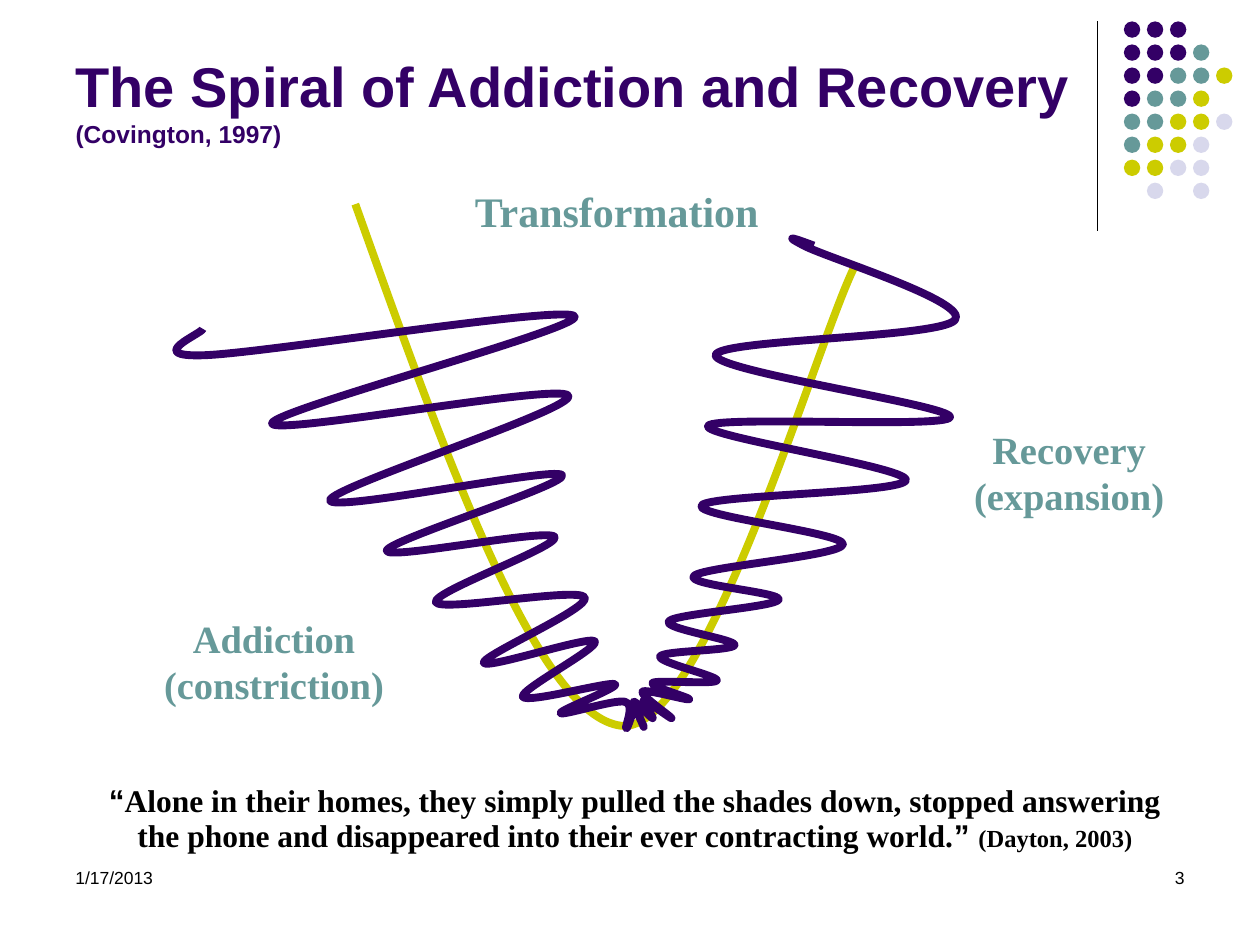
from dataclasses import dataclass

from lxml import etree
from pptx import Presentation
from pptx import util as u
from pptx.dml import color
from pptx.enum import shapes, text
from pptx.oxml import ns

PURPLE, TEAL, OLIVE, LILAC, BLACK = "330066", "669999", "CCCC00", "D8D8EC", "000000"
SANS, SERIF = "Arial", "Times New Roman"
LEFT, CENTER, RIGHT = text.PP_ALIGN.LEFT, text.PP_ALIGN.CENTER, text.PP_ALIGN.RIGHT

# Dot ornament: one letter per dot, evenly spaced
DOT_COLORS = {"P": PURPLE, "T": TEAL, "O": OLIVE, "L": LILAC}
DOT_ROWS = ["PPP", "PPPT", "PPTTO", "PTTO", "TTOOL", "TOOL", "OOLL", ".L.L"]
DOT_LEFT, DOT_TOP, DOT_SIZE = 8.92, 0.17, 0.13
DOT_PITCH = 1.28 / 7

Point = tuple[float, float]


@dataclass
class Label:
    lines: list[str]
    left: float
    top: float
    width: float
    height: float
    size: float
    font: str = SERIF
    color: str = TEAL
    bold: bool = True
    alignment: text.PP_ALIGN = CENTER
    wrap: bool = False


# Turning points of the curves, in inches
AXIS: list[Point] = [(2.82, 1.62), (4.93, 5.76), (6.79, 2.1)]
RECOVERY: list[Point] = [
    (6.46, 1.95), (6.38, 1.95), (7.58, 2.54), (5.68, 2.82), (7.54, 3.31), (5.62, 3.38),
    (7.19, 3.81), (5.57, 4.01), (6.69, 4.32), (5.51, 4.57), (6.18, 4.76), (5.31, 4.93),
    (5.83, 5.12), (5.24, 5.21), (5.69, 5.4), (5.18, 5.42), (5.47, 5.55), (5.1, 5.49),
    (5.33, 5.7), (5.11, 5.56), (5.18, 5.7), (5.03, 5.57), (5.11, 5.77), (5.04, 5.64),
]
ADDICTION: list[Point] = [
    (4.97, 5.78), (4.96, 5.57), (4.45, 5.66), (4.88, 5.43), (4.15, 5.53), (4.72, 5.09),
    (3.84, 5.26), (4.64, 4.74), (3.46, 4.78), (4.4, 4.26), (3.07, 4.37), (4.46, 3.77),
    (2.62, 3.97), (4.51, 3.14), (2.16, 3.36), (4.56, 2.51), (1.62, 2.82), (1.61, 2.61),
]

LABELS = [
    Label(["Transformation"], 3.67, 1.42, 2.48, 0.5, 24, alignment=LEFT),
    Label(["Addiction", "(constriction)"], 1.2, 4.83, 1.95, 0.83, 22),
    Label(["Recovery", "(expansion)"], 7.63, 3.33, 1.71, 0.83, 22),
    Label(["1/17/2013"], 0.5, 6.83, 2.33, 0.5, 10, SANS, BLACK, False, LEFT, True),
    Label(["3"], 7.17, 6.83, 2.33, 0.5, 10, SANS, BLACK, False, RIGHT, True),
]

QUOTE = [
    ("“", SANS, 18),
    ("Alone in their homes, they simply pulled the shades down, stopped answering "
     "the phone and disappeared into their ever contracting world.", SERIF, 18),
    ("” ", SANS, 18),
    ("(Dayton, 2003)", SERIF, 14),
]


def rgb(value: str) -> color.RGBColor:
    return color.RGBColor.from_string(value)


def style_font(font, name: str, size: float, value: str, bold: bool = True) -> None:
    font.name, font.size, font.bold = name, u.Pt(size), bold
    font.color.rgb = rgb(value)


def draw_ornament(slide) -> None:
    rule = slide.shapes.add_connector(
        shapes.MSO_CONNECTOR.STRAIGHT,
        u.Inches(8.71), u.Inches(0.17), u.Inches(8.71), u.Inches(1.83))
    rule.line.color.rgb = rgb(BLACK)
    rule.line.width = u.Pt(0.75)
    etree.SubElement(rule.element.spPr, ns.qn("a:effectLst"))
    for row, letters in enumerate(DOT_ROWS):
        for column, letter in enumerate(letters):
            if letter in DOT_COLORS:
                dot = slide.shapes.add_shape(
                    shapes.MSO_SHAPE.OVAL,
                    u.Inches(DOT_LEFT + column * DOT_PITCH),
                    u.Inches(DOT_TOP + row * DOT_PITCH),
                    u.Inches(DOT_SIZE), u.Inches(DOT_SIZE))
                dot.shadow.inherit = False
                dot.fill.solid()
                dot.fill.fore_color.rgb = rgb(DOT_COLORS[letter])
                dot.line.fill.background()


def smooth_steps(turns: list[Point]) -> list[Point]:
    """Two control points and an end point for each stretch of a smooth curve."""
    padded = [turns[0], *turns, turns[-1]]
    # The tangent at a turn is parallel to the line between its neighbours
    tangents = [((after[0] - before[0]) / 6, (after[1] - before[1]) / 6)
                for before, after in zip(padded, padded[2:])]
    steps = []
    for i, (start, end) in enumerate(zip(turns, turns[1:])):
        leave, arrive = tangents[i], tangents[i + 1]
        second = (end[0] - arrive[0], end[1] - arrive[1])
        first = (start[0] + leave[0], start[1] + leave[1])
        if i == 0:
            first = ((start[0] + second[0]) / 2, (start[1] + second[1]) / 2)
        steps += [first, second, end]
    return steps


def draw_curve(slide, turns: list[Point], line_color: str) -> None:
    points = [(u.Inches(x), u.Inches(y)) for x, y in smooth_steps(turns)]
    builder = slide.shapes.build_freeform(*map(u.Inches, turns[0]))
    builder.add_line_segments(points, close=False)
    shape = builder.convert_to_shape()
    shape.shadow.inherit = False
    shape.fill.background()
    shape.line.color.rgb = rgb(line_color)
    shape.line.width = u.Pt(4.5)
    etree.SubElement(shape.element.spPr.find(ns.qn("a:ln")), ns.qn("a:round"))
    # Merge every three line steps into one cubic Bézier step
    steps = list(shape.element.iter(ns.qn("a:lnTo")))
    for trio in zip(steps[::3], steps[1::3], steps[2::3]):
        bezier = etree.Element(ns.qn("a:cubicBezTo"))
        trio[0].addprevious(bezier)
        for step in trio:
            bezier.append(step[0])
            step.getparent().remove(step)


def draw_label(slide, label: Label) -> None:
    box = slide.shapes.add_textbox(*map(
        u.Inches, (label.left, label.top, label.width, label.height)))
    frame = box.text_frame
    frame.word_wrap = label.wrap
    if not label.wrap:
        frame.auto_size = text.MSO_AUTO_SIZE.SHAPE_TO_FIT_TEXT
    frame.text = "\n".join(label.lines)
    for paragraph in frame.paragraphs:
        paragraph.alignment = label.alignment
        style_font(paragraph.font, label.font, label.size, label.color, label.bold)


def fill_title(title) -> None:
    title.left, title.top = u.Inches(0.5), u.Inches(0.13)
    title.width, title.height = u.Inches(8.25), u.Inches(1.33)
    frame = title.text_frame
    frame.auto_size = text.MSO_AUTO_SIZE.NONE
    frame.vertical_anchor = text.MSO_ANCHOR.MIDDLE
    paragraph = frame.paragraphs[0]
    paragraph.alignment = LEFT
    heading = paragraph.add_run()
    heading.text = "The Spiral of Addiction and Recovery"
    style_font(heading.font, SANS, 32, PURPLE)
    paragraph.add_line_break()
    citation = paragraph.add_run()
    citation.text = "(Covington, 1997)"
    style_font(citation.font, SANS, 14, PURPLE)


def draw_quote(slide) -> None:
    table = slide.shapes.add_table(
        1, 1, u.Inches(0.75), u.Inches(6.17), u.Inches(8.58), u.Inches(0.7)).table
    table.first_row = table.horz_banding = False
    cell = table.cell(0, 0)
    cell.fill.background()
    paragraph = cell.text_frame.paragraphs[0]
    paragraph.alignment = CENTER
    for words, font, size in QUOTE:
        run = paragraph.add_run()
        run.text = words
        style_font(run.font, font, size, BLACK)


def main() -> None:
    presentation = Presentation()
    presentation.slide_width, presentation.slide_height = u.Inches(10), u.Inches(7.5)
    slide = presentation.slides.add_slide(presentation.slide_layouts[5])
    fill_title(slide.shapes.title)
    draw_ornament(slide)
    draw_curve(slide, AXIS, OLIVE)
    draw_curve(slide, RECOVERY + ADDICTION, PURPLE)
    for label in LABELS:
        draw_label(slide, label)
    draw_quote(slide)
    presentation.save("out.pptx")


if __name__ == "__main__":
    main()
